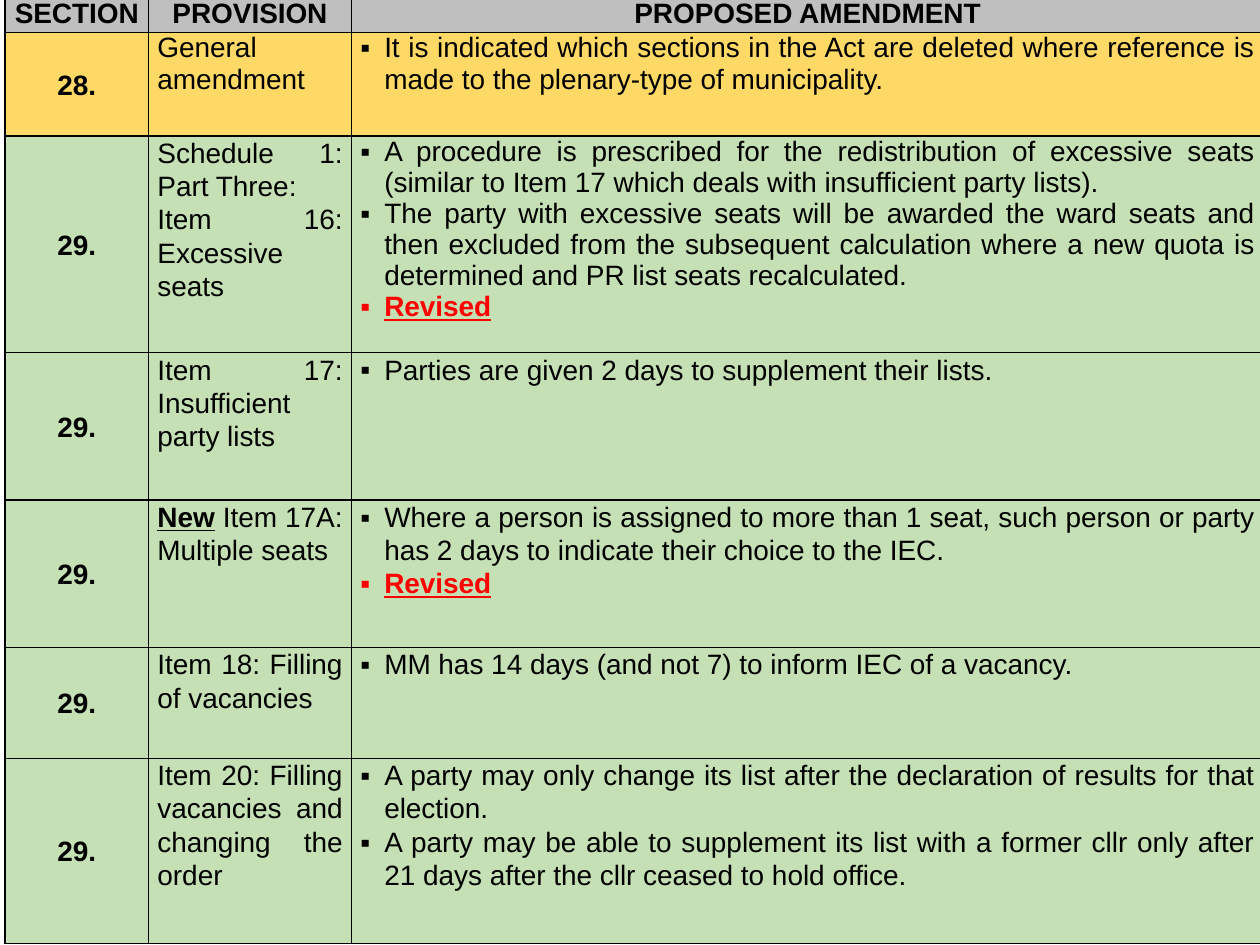
from lxml import etree
from pptx import Presentation
from pptx.dml.color import RGBColor
from pptx.enum.text import MSO_ANCHOR, PP_ALIGN
from pptx.oxml.ns import qn
from pptx.util import Inches, Pt

CENTER, LEFT, JUSTIFY = PP_ALIGN.CENTER, PP_ALIGN.LEFT, PP_ALIGN.JUSTIFY
TOP, MIDDLE = MSO_ANCHOR.TOP, MSO_ANCHOR.MIDDLE

COLORS = {
    "text": "000000",
    "border": "000000",
    "revised": "FF0000",
    "header": "BFBFBF",
    "general": "FFD966",
    "schedule": "C5E0B4",
}
FONT, SIZE = "Arial", 16
LOOSE, SINGLE = 1.07, 1.0
COL_WIDTHS = [1.14, 1.61, 7.24]
ROW_HEIGHTS = [0.29, 0.82, 1.72, 1.17, 1.17, 0.88, 1.47]
HEADINGS = ["SECTION", "PROVISION", "PROPOSED AMENDMENT"]

# A paragraph is a list of runs; a run is (text, style).
STYLES = {
    "plain": {"bold": False, "underline": False, "color": "text"},
    "bold": {"bold": True, "underline": False, "color": "text"},
    "new": {"bold": True, "underline": True, "color": "text"},
    "revised": {"bold": True, "underline": True, "color": "revised"},
}


def plain(text):
    return [(text, "plain")]


def bold(text):
    return [(text, "bold")]


REVISED = [("Revised", "revised")]

# section, fill, provision alignment, (provision, amendment) spacing, provision, amendment
ROWS = [
    ("28.", "general", LEFT, (SINGLE, SINGLE),
     [plain("General amendment")],
     [plain("It is indicated which sections in the Act are deleted where reference is "
            "made to the plenary-type of municipality.")]),
    ("29.", "schedule", JUSTIFY, (LOOSE, SINGLE),
     [plain("Schedule 1: Part Three: "), plain("Item 16: Excessive seats")],
     [plain("A procedure is prescribed for the redistribution of excessive seats "
            "(similar to Item 17 which deals with insufficient party lists). "),
      plain("The party with excessive seats will be awarded the ward seats and then "
            "excluded from the subsequent calculation where a new quota is determined "
            "and PR list seats recalculated."),
      REVISED]),
    ("29.", "schedule", JUSTIFY, (LOOSE, LOOSE),
     [plain("Item 17: Insufficient party lists")],
     [plain("Parties are given 2 days to supplement their lists.")]),
    ("29.", "schedule", JUSTIFY, (LOOSE, LOOSE),
     [[("New", "new"), (" Item 17A: Multiple seats", "plain")]],
     [plain("Where a person is assigned to more than 1 seat, such person or party has "
            "2 days to indicate their choice to the IEC."),
      REVISED]),
    ("29.", "schedule", JUSTIFY, (LOOSE, LOOSE),
     [plain("Item 18: Filling of vacancies")],
     [plain("MM has 14 days (and not 7) to inform IEC of a vacancy.")]),
    ("29.", "schedule", JUSTIFY, (LOOSE, LOOSE),
     [plain("Item 20: Filling vacancies and changing the order")],
     [plain("A party may only change its list after the declaration of results for "
            "that election."),
      plain("A party may be able to supplement its list with a former cllr only after "
            "21 days after the cllr ceased to hold office.")]),
]


def rgb(name):
    return RGBColor.from_string(COLORS[name])


def add_borders(cell):
    tcPr = cell._tc.get_or_add_tcPr()
    for side in ("a:lnL", "a:lnR", "a:lnT", "a:lnB"):
        ln = etree.SubElement(tcPr, qn(side), w=str(Pt(1)))
        fill = etree.SubElement(ln, qn("a:solidFill"))
        etree.SubElement(fill, qn("a:srgbClr"), val=COLORS["border"])


def add_bullet(p):
    pPr = p._p.get_or_add_pPr()
    pPr.set("marL", str(Inches(0.19)))
    pPr.set("indent", str(Inches(-0.19)))
    etree.SubElement(pPr, qn("a:buFont"), typeface=FONT)
    etree.SubElement(pPr, qn("a:buChar"), char="▪")


def add_run(p, text, style):
    r = p.add_run()
    r.text = text
    r.font.name, r.font.size = FONT, Pt(SIZE)
    r.font.bold = STYLES[style]["bold"]
    r.font.underline = STYLES[style]["underline"]
    r.font.color.rgb = rgb(STYLES[style]["color"])


def fill_cell(cell, paragraphs, fill, align, spacing=LOOSE, margin=0.07,
              anchor=TOP, bullets=False):
    add_borders(cell)
    cell.fill.solid()
    cell.fill.fore_color.rgb = rgb(fill)
    cell.margin_left = cell.margin_right = Inches(margin)
    cell.margin_top = cell.margin_bottom = 0
    cell.vertical_anchor = anchor
    tf = cell.text_frame
    for i, runs in enumerate(paragraphs):
        p = tf.add_paragraph() if i else tf.paragraphs[0]
        p.alignment = align
        p.line_spacing = spacing
        if bullets:
            add_bullet(p)
        for text, style in runs:
            add_run(p, text, style)


def add_amendment_table(slide):
    table = slide.shapes.add_table(
        len(ROW_HEIGHTS), len(COL_WIDTHS), Inches(0.04), Inches(-0.03),
        Inches(sum(COL_WIDTHS)), Inches(sum(ROW_HEIGHTS))).table
    table.horz_banding = False
    for column, width in zip(table.columns, COL_WIDTHS):
        column.width = Inches(width)
    for row, height in zip(table.rows, ROW_HEIGHTS):
        row.height = Inches(height)

    for c, heading in enumerate(HEADINGS):
        fill_cell(table.cell(0, c), [bold(heading)], "header", CENTER, margin=0.06)
    for i, (section, fill, align, spacing, provision, amendment) in enumerate(ROWS, 1):
        fill_cell(table.cell(i, 0), [bold(section)], fill, CENTER,
                  margin=0.06, anchor=MIDDLE)
        fill_cell(table.cell(i, 1), provision, fill, align, spacing[0])
        fill_cell(table.cell(i, 2), amendment, fill, JUSTIFY, spacing[1], bullets=True)


def main():
    prs = Presentation()
    prs.slide_width, prs.slide_height = Inches(10), Inches(7.5)
    slide = prs.slides.add_slide(prs.slide_layouts[6])
    add_amendment_table(slide)
    prs.save("out.pptx")


if __name__ == "__main__":
    main()
